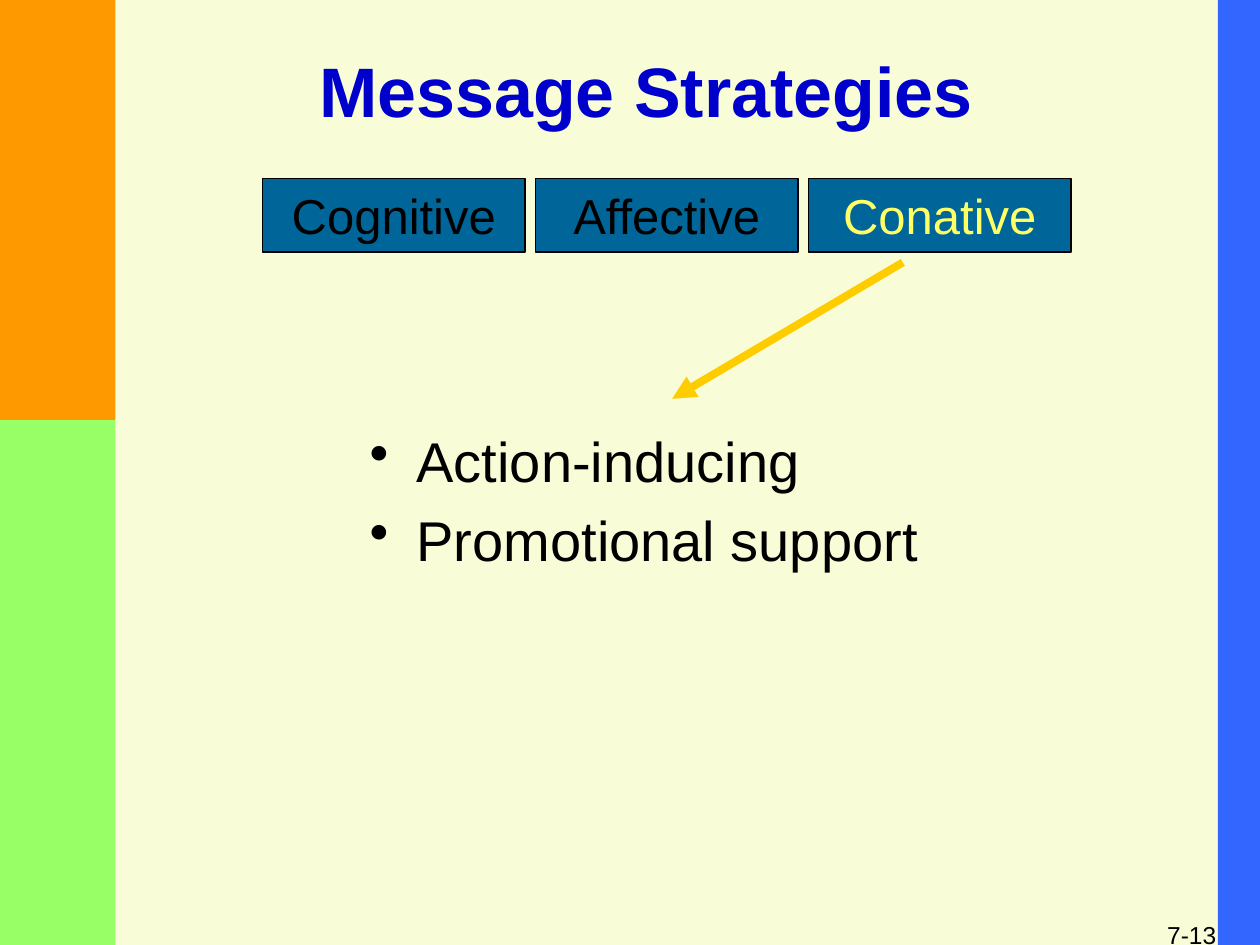
from lxml.etree import SubElement
from pptx import Presentation
from pptx.dml.color import RGBColor
from pptx.enum.shapes import MSO_CONNECTOR, MSO_SHAPE
from pptx.enum.text import MSO_ANCHOR, PP_ALIGN
from pptx.oxml.ns import qn
from pptx.util import Cm, Pt

CREAM = RGBColor(0xF9, 0xFD, 0xD7)
ORANGE = RGBColor(0xFF, 0x99, 0x00)
GREEN = RGBColor(0x99, 0xFF, 0x66)
BLUE = RGBColor(0x33, 0x66, 0xFF)
TITLE_BLUE = RGBColor(0x00, 0x00, 0xCC)
TEAL = RGBColor(0x00, 0x66, 0x99)
YELLOW = RGBColor(0xFF, 0xFF, 0x66)
GOLD = RGBColor(0xFF, 0xCC, 0x00)
BLACK = RGBColor(0x00, 0x00, 0x00)

PAGE_WIDTH, PAGE_HEIGHT = 25.4, 19.05


def style_paragraph(para, text, size, color=BLACK, align=PP_ALIGN.LEFT, bold=False):
    para.text = text
    para.alignment = align
    font = para.font
    font.name = "Arial"
    font.size = Pt(size)
    font.bold = bold
    font.color.rgb = color


def add_rectangle(page, box, fill, outline=None):
    shape = page.shapes.add_shape(MSO_SHAPE.RECTANGLE, *map(Cm, box))
    shape.shadow.inherit = False
    shape.fill.solid()
    shape.fill.fore_color.rgb = fill
    if outline is None:
        shape.line.fill.background()
    else:
        shape.line.color.rgb = outline
        shape.line.width = Pt(1)
    return shape


def add_text_frame(page, box, anchor=MSO_ANCHOR.MIDDLE):
    frame = page.shapes.add_textbox(*map(Cm, box)).text_frame
    frame.word_wrap = True
    frame.vertical_anchor = anchor
    return frame


def add_side_bands(page, box):
    left, top, width, height = box
    left_width, right_width, split = 2.33, 0.85, 8.47
    add_rectangle(page, (left + width - right_width, top, right_width, height), BLUE)
    add_rectangle(page, (left, top, left_width, split), ORANGE)
    add_rectangle(page, (left, top + split, left_width, height - split), GREEN)


def add_title(page, box, text):
    para = add_text_frame(page, box).paragraphs[0]
    style_paragraph(para, text, 40, TITLE_BLUE, PP_ALIGN.CENTER, bold=True)


def add_strategy_row(page, box, strategies, active):
    """Place equal boxes side by side, with the active strategy in yellow."""
    left, top, width, height = box
    gap = 0.21
    box_width = (width - gap * (len(strategies) - 1)) / len(strategies)
    for index, strategy in enumerate(strategies):
        place = (left + index * (box_width + gap), top, box_width, height)
        frame = add_rectangle(page, place, TEAL, BLACK).text_frame
        frame.word_wrap = False
        frame.vertical_anchor = MSO_ANCHOR.MIDDLE
        color = YELLOW if strategy == active else BLACK
        style_paragraph(frame.paragraphs[0], strategy, 28, color, PP_ALIGN.CENTER)


def add_arrow(page, start, end):
    arrow = page.shapes.add_connector(MSO_CONNECTOR.STRAIGHT, *map(Cm, start + end))
    arrow.line.color.rgb = GOLD
    arrow.line.width = Pt(4.5)
    SubElement(arrow.line._get_or_add_ln(), qn("a:tailEnd"), type="triangle")
    SubElement(arrow._element.spPr, qn("a:effectLst"))


def add_bullets(page, box, items):
    frame = add_text_frame(page, box, MSO_ANCHOR.TOP)
    for index, item in enumerate(items):
        para = frame.add_paragraph() if index else frame.paragraphs[0]
        style_paragraph(para, item, 32)
        para.space_before = Pt(7)
        properties = para._p.get_or_add_pPr()
        properties.set("marL", str(Cm(0.95)))
        properties.set("indent", str(-Cm(0.95)))
        bullet = properties.makeelement(qn("a:buChar"), {"char": "•"})
        properties.find(qn("a:defRPr")).addprevious(bullet)


def add_page_number(page, box, text):
    para = add_text_frame(page, box).paragraphs[0]
    style_paragraph(para, text, 14, align=PP_ALIGN.RIGHT)


def main():
    deck = Presentation()
    deck.slide_width, deck.slide_height = Cm(PAGE_WIDTH), Cm(PAGE_HEIGHT)
    page = deck.slides.add_slide(deck.slide_layouts[6])
    page.background.fill.solid()
    page.background.fill.fore_color.rgb = CREAM

    add_side_bands(page, (0, 0, PAGE_WIDTH, PAGE_HEIGHT))
    add_page_number(page, (19.47, 18.2, 5.3, 1.27), "7-13")
    add_title(page, (2.12, 0.42, 21.8, 2.75), "Message Strategies")
    add_bullets(page, (7.2, 8.47, 13.12, 8.25), ["Action-inducing", "Promotional support"])
    strategies = ["Cognitive", "Affective", "Conative"]
    add_strategy_row(page, (5.29, 3.6, 16.3, 1.48), strategies, "Conative")
    add_arrow(page, (18.2, 5.29), (13.55, 8.04))
    deck.save("out.pptx")


if __name__ == "__main__":
    main()
